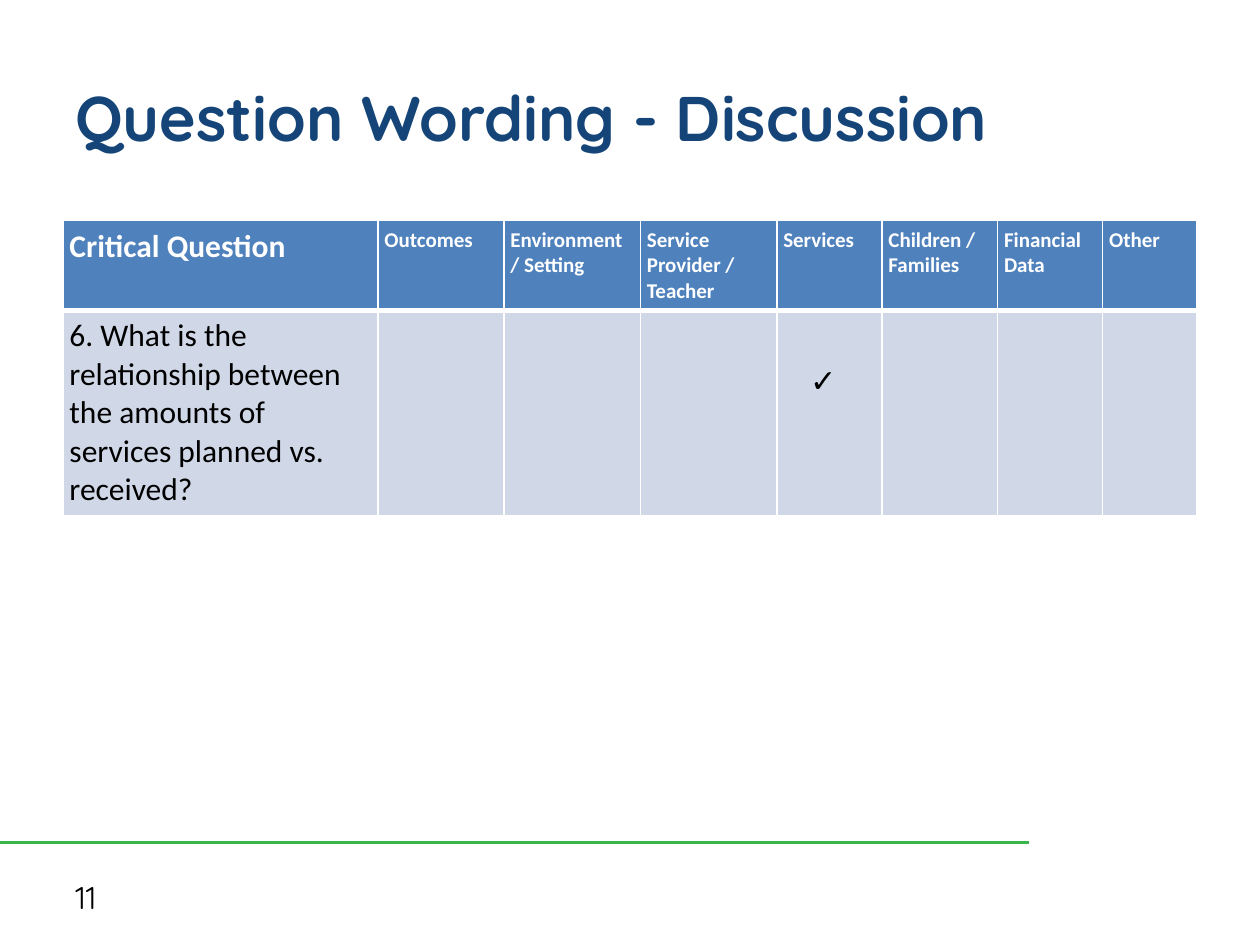
from dataclasses import dataclass

from lxml.etree import SubElement
from pptx import Presentation
from pptx.dml.color import RGBColor
from pptx.enum.shapes import MSO_CONNECTOR as Connector
from pptx.enum.text import MSO_ANCHOR as Anchor
from pptx.oxml.ns import qn
from pptx.util import Cm, Pt

NAVY, GREEN, BLUE = "154578", "39B54A", "4F81BD"
PALE, WHITE, BLACK = "D0D8E8", "FFFFFF", "000000"


@dataclass
class Style:
    font: str
    size: int
    color: str = BLACK
    bold: bool = False


@dataclass
class Label:
    text: str
    left: float
    top: float
    width: float
    height: float
    style: Style
    anchor: Anchor = Anchor.MIDDLE


@dataclass
class Column:
    heading: str
    width: float
    size: int = 12
    answer: str = ""


LABELS = [
    Label("Question Wording - Discussion", 1.27, 0.76, 22.86, 3.18,
          Style("Quicksand", 36, NAVY, True)),
    Label("11", 1.27, 17.58, 5.92, 1.02, Style("Quicksand", 18)),
    Label("✓", 16.08, 7.16, 1.07, 1.02, Style("Calibri", 18), Anchor.TOP),
]

COLUMNS = [
    Column("Critical Question", 6.35, 18,
           "6. What is the relationship between the amounts of services planned vs. received?"),
    Column("Outcomes", 2.54),
    Column("Environment / Setting", 2.75),
    Column("Service Provider / Teacher", 2.75),
    Column("Services", 2.12),
    Column("Children / Families", 2.33),
    Column("Financial Data", 2.12),
    Column("Other", 1.9),
]
ROW_HEIGHTS = [1.8, 4.1]


def rgb(value: str) -> RGBColor:
    return RGBColor.from_string(value)


def add_span(para, text: str, style: Style) -> None:
    span = para.add_run()
    span.text = text
    span.font.name = style.font
    span.font.size = Pt(style.size)
    span.font.bold = style.bold
    span.font.color.rgb = rgb(style.color)


def add_label(page, label: Label) -> None:
    box = page.shapes.add_textbox(Cm(label.left), Cm(label.top),
                                  Cm(label.width), Cm(label.height))
    frame = box.text_frame
    frame.word_wrap = True
    frame.vertical_anchor = label.anchor
    add_span(frame.paragraphs[0], label.text, label.style)


def add_border(cell, side: str, points: float) -> None:
    line = SubElement(cell._tc.get_or_add_tcPr(), qn(f"a:ln{side}"), w=str(Pt(points)))
    fill = SubElement(line, qn("a:solidFill"))
    SubElement(fill, qn("a:srgbClr"), val=WHITE)


def fill_cell(cell, text: str, style: Style, fill: str, borders: dict[str, float]) -> None:
    cell.margin_left = cell.margin_right = Cm(0.13)
    cell.margin_top = cell.margin_bottom = Cm(0.13)
    for side, points in borders.items():
        add_border(cell, side, points)
    cell.fill.solid()
    cell.fill.fore_color.rgb = rgb(fill)
    if text:
        add_span(cell.text_frame.paragraphs[0], text, style)


def add_question_table(page, columns: list[Column]) -> None:
    width = sum(column.width for column in columns)
    table = page.shapes.add_table(len(ROW_HEIGHTS), len(columns), Cm(1.27), Cm(4.45),
                                  Cm(width), Cm(sum(ROW_HEIGHTS))).table
    for row, height in zip(table.rows, ROW_HEIGHTS):
        row.height = Cm(height)
    for index, column in enumerate(columns):
        table.columns[index].width = Cm(column.width)
        fill_cell(table.cell(0, index), column.heading,
                  Style("Calibri", column.size, WHITE, True), BLUE,
                  {"L": 1, "R": 1, "T": 1, "B": 3})
        fill_cell(table.cell(1, index), column.answer, Style("Calibri", 18), PALE,
                  {"L": 1, "R": 1, "T": 3, "B": 1})


def add_rule(page, right: float, top: float) -> None:
    rule = page.shapes.add_connector(Connector.STRAIGHT, Cm(0), Cm(top), Cm(right), Cm(top))
    rule.line.color.rgb = rgb(GREEN)
    rule.line.width = Pt(1.5)
    SubElement(rule._element.spPr, qn("a:effectLst"))


def main() -> None:
    deck = Presentation()
    deck.slide_width, deck.slide_height = Cm(25.4), Cm(19.05)
    page = deck.slides.add_slide(deck.slide_layouts[6])

    # Footer rule
    add_rule(page, 20.75, 16.99)

    # Question table
    add_question_table(page, COLUMNS)

    # Title, page number and check mark
    for label in LABELS:
        add_label(page, label)

    deck.save("out.pptx")


if __name__ == "__main__":
    main()
